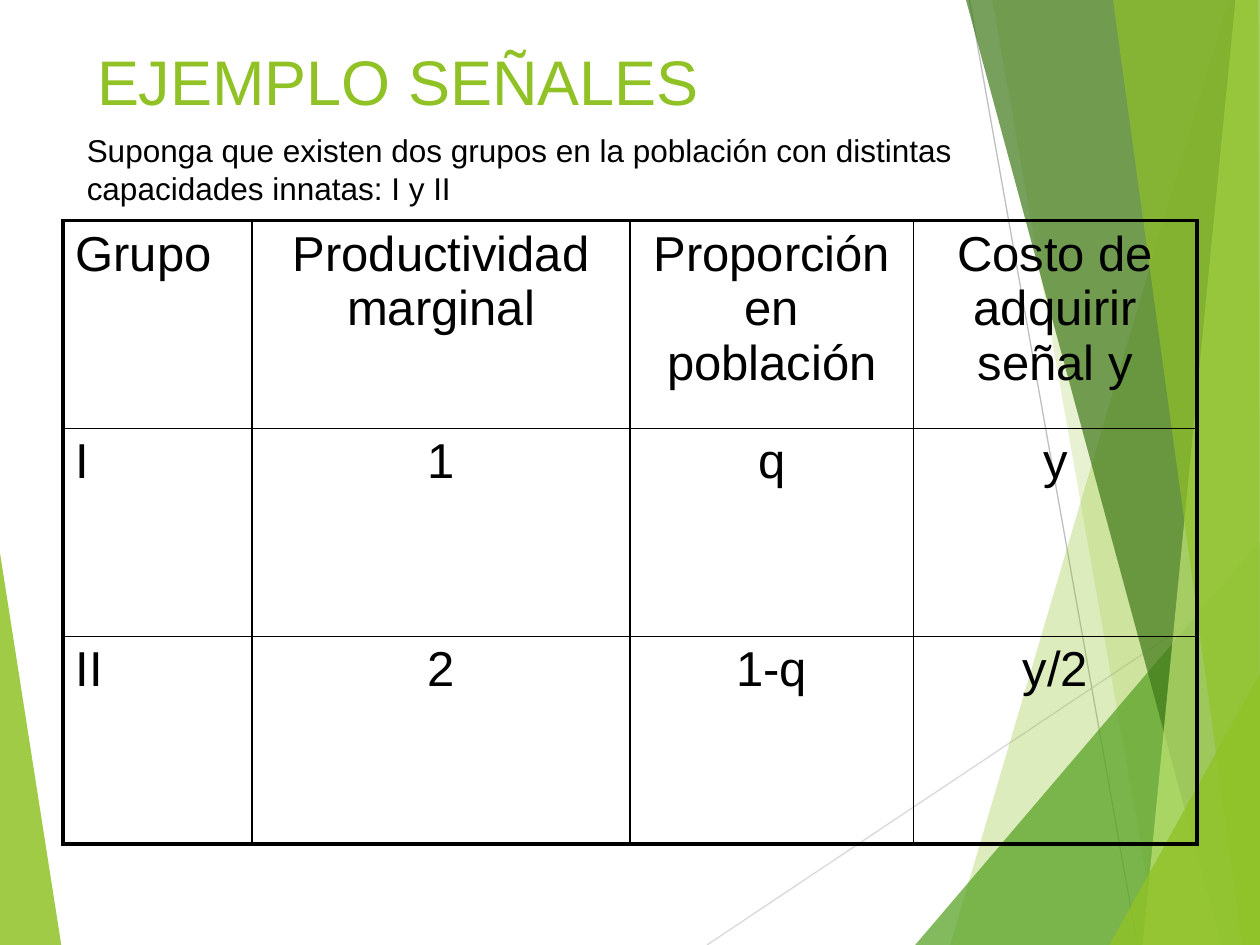
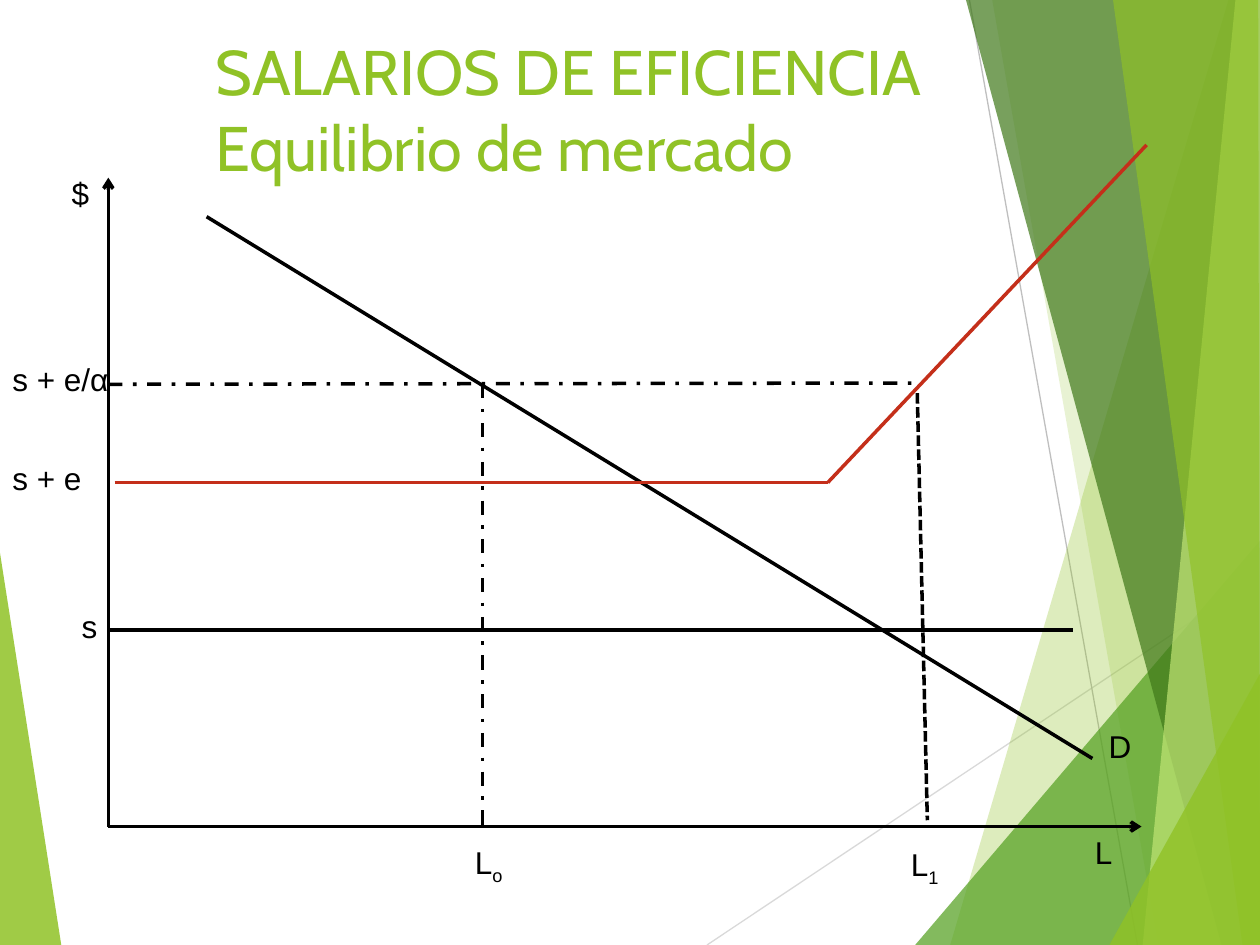
from dataclasses import dataclass
from itertools import product

from pptx import Presentation
from pptx.dml.color import RGBColor
from pptx.enum.dml import MSO_LINE
from pptx.enum.shapes import MSO_CONNECTOR
from pptx.enum.text import MSO_ANCHOR, MSO_AUTO_SIZE, PP_ALIGN as Align
from pptx.oxml import parse_xml
from pptx.oxml.ns import nsdecls, qn
from pptx.oxml.xmlchemy import OxmlElement
from pptx.slide import Slide
from pptx.util import Pt

W, H = 720, 540
GREEN, LEAF, FOREST, LIME = "90C226", "54A021", "3F7819", "C0E474"
BLACK, RED = "000000", "C42F1A"


@dataclass
class Line:
    start: tuple[float, float]
    end: tuple[float, float]
    color: str = BLACK
    width: float = 2
    dash: MSO_LINE | None = None
    arrow: bool = False


@dataclass
class Band:
    points: list[tuple[int, int]]
    color: str
    opacity: int


@dataclass
class Label:
    text: str
    left: float
    top: float
    width: float
    sub: str = ""


# Decoration shared by both slides, from back to front
DECORATION = [
    Band([(0, 316), (35, H), (0, H)], GREEN, 85),
    Line((404, H), (W, 329), "D9D9D9", 0.75),
    Line((554, 0), (650, H), "BFBFBF", 0.75),
    Band([(702, 0), (543, H), (W, H), (W, 0)], GREEN, 30),
    Band([(567, 0), (662, H), (W, H), (W, 0)], GREEN, 20),
    Band([(523, H), (W, 309), (W, H)], LEAF, 72),
    Band([(552, 0), (698, H), (W, H), (W, 0)], FOREST, 70),
    Band([(706, 0), (653, H), (W, H), (W, 0)], LIME, 70),
    Band([(636, 0), (710, H), (W, H), (719, 0)], GREEN, 65),
    Band([(634, H), (W, 385), (W, H)], GREEN, 80),
]

# Groups and their signalling costs
TABLE_ROWS = [
    ("Grupo", "Productividad marginal", "Proporción en población",
     "Costo de adquirir señal y"),
    ("I", "1", "q", "y"),
    ("II", "2", "1-q", "y/2"),
]
COL_WIDTHS = (108, 216, 162, 162)
ROW_HEIGHT = 118.8

# Market equilibrium diagram
AXIS_X, AXIS_Y = 61.92, 472.32
WAGE_S, WAGE_SE, WAGE_SEA = 360, 275.76, 219.6
L0_X, KINK_X = 275.76, 473.04
DIAGRAM_LINES = [
    Line((AXIS_X, AXIS_Y), (AXIS_X, 101.52), arrow=True),
    Line((AXIS_X, AXIS_Y), (652.32, AXIS_Y), arrow=True),
    Line((118.08, 123.84), (624.24, 433.44)),
    Line((AXIS_X, WAGE_S), (613.44, WAGE_S)),
    Line((65.52, WAGE_SE), (KINK_X, WAGE_SE), RED),
    Line((AXIS_X, WAGE_SEA), (524.16, 218.88), dash=MSO_LINE.DASH_DOT),
    Line((L0_X, WAGE_SEA), (L0_X, AXIS_Y), dash=MSO_LINE.DASH_DOT),
    Line((524.16, 224.64), (529.92, 468.72), dash=MSO_LINE.SQUARE_DOT),
    Line((KINK_X, WAGE_SE), (655.2, 82.8), RED),
]
DIAGRAM_LABELS = [
    Label("L", 618.48, 472.32, 84),
    Label("$", 33.84, 95.76, 56),
    Label("s", 39.6, 343.44, 56),
    Label("s + e", 0, 258.48, 56),
    Label("s + e/α", 0, 202.32, 84),
    Label("L", 264.24, 478.08, 90, sub="o"),
    Label("L", 513.36, 479.52, 40, sub="1"),
    Label("D", 626.4, 411.84, 40),
]


def rgb(color: str) -> RGBColor:
    return RGBColor.from_string(color)


def write(tf, text: str, *, size: float = 18, font: str = "Arial",
          color: str = BLACK, align: Align = Align.LEFT, sub: str = "") -> None:
    """Fill a text frame with one formatted paragraph."""
    tf.word_wrap = True
    p = tf.paragraphs[0]
    p.alignment = align
    p.space_before = Pt(0)
    for i, line in enumerate(text.split("\n")):
        if i:
            p.add_line_break()
        p.add_run().text = line
    if sub:
        r = p.add_run()
        r.text = sub
        r.font._element.set("baseline", "-25000")
    for r in p.runs:
        r.font.size, r.font.name = Pt(size), font
        r.font.color.rgb = rgb(color)


def draw_line(s: Slide, line: Line):
    c = s.shapes.add_connector(MSO_CONNECTOR.STRAIGHT,
                               *map(Pt, line.start + line.end))
    c.line.color.rgb = rgb(line.color)
    c.line.width = Pt(line.width)
    if line.dash:
        c.line.dash_style = line.dash
    if line.arrow:
        tail = OxmlElement("a:tailEnd")
        tail.set("type", "arrow")
        c.line._get_or_add_ln().append(tail)
    c._element.spPr.append(OxmlElement("a:effectLst"))
    return c


def draw_band(s: Slide, band: Band):
    builder = s.shapes.build_freeform(*band.points[0], scale=Pt(1))
    builder.add_line_segments(band.points[1:], close=True)
    sp = builder.convert_to_shape()
    sp.shadow.inherit = False
    sp.fill.solid()
    sp.fill.fore_color.rgb = rgb(band.color)
    sp.line.fill.background()
    alpha = OxmlElement("a:alpha")
    alpha.set("val", str(band.opacity * 1000))
    sp._element.spPr.find(".//" + qn("a:srgbClr")).append(alpha)
    return sp


def decorate_layout(s: Slide) -> None:
    """Draw the decoration and move it to the layout, behind all slide content."""
    tree = s.slide_layout.shapes._spTree
    for item in DECORATION:
        draw = draw_band if isinstance(item, Band) else draw_line
        tree.append(draw(s, item)._element)


def add_slide(prs, title: str, left: float, top: float, font: str) -> Slide:
    s = prs.slides.add_slide(prs.slide_layouts[5])
    sp = s.shapes.title
    sp.left, sp.top, sp.width, sp.height = map(Pt, (left, top, 500, 104))
    tf = sp.text_frame
    tf.auto_size = MSO_AUTO_SIZE.NONE
    tf.vertical_anchor = MSO_ANCHOR.TOP
    write(tf, title, size=36, font=font, color=GREEN)
    return s


def add_label(s: Slide, label: Label, height: float = 29) -> None:
    box = s.shapes.add_textbox(
        *map(Pt, (label.left, label.top, label.width, height)))
    write(box.text_frame, label.text, sub=label.sub)


def set_borders(cell, widths: dict[str, float]) -> None:
    tc_pr = cell._tc.get_or_add_tcPr()
    for i, (side, width) in enumerate(widths.items()):
        tc_pr.insert(i, parse_xml(
            f'<a:ln{side} {nsdecls("a")} w="{Pt(width)}"><a:solidFill>'
            f'<a:srgbClr val="{BLACK}"/></a:solidFill></a:ln{side}>'))


def add_group_table(s: Slide) -> None:
    n_rows, n_cols = len(TABLE_ROWS), len(COL_WIDTHS)
    table = s.shapes.add_table(
        n_rows, n_cols, Pt(36), Pt(126),
        Pt(sum(COL_WIDTHS)), Pt(ROW_HEIGHT * n_rows)).table
    table.first_row = table.horz_banding = False
    for col, width in zip(table.columns, COL_WIDTHS):
        col.width = Pt(width)
    for row in table.rows:
        row.height = Pt(ROW_HEIGHT)
    for i, j in product(range(n_rows), range(n_cols)):
        cell = table.cell(i, j)
        write(cell.text_frame, TABLE_ROWS[i][j], size=28,
              align=Align.CENTER if j else Align.LEFT)
        cell.fill.background()
        outer = {"L": j == 0, "R": j == n_cols - 1,
                 "T": i == 0, "B": i == n_rows - 1}
        set_borders(cell, {k: 2.25 if v else 1 for k, v in outer.items()})


def main() -> None:
    prs = Presentation()
    prs.slide_width, prs.slide_height = Pt(W), Pt(H)

    # Signalling example
    s = add_slide(prs, "EJEMPLO SEÑALES", 48.24, 20.88, "Arial")
    decorate_layout(s)
    add_group_table(s)
    add_label(s, Label("Suponga que existen dos grupos en la población con "
                       "distintas capacidades innatas: I y II",
                       42.48, 71.28, 533), height=51)

    # Efficiency wages
    s = add_slide(prs, "SALARIOS DE EFICIENCIA\nEquilibrio de mercado",
                  115.92, 15.12, "Cabin")
    for line in DIAGRAM_LINES:
        draw_line(s, line)
    for label in DIAGRAM_LABELS:
        add_label(s, label)

    prs.save("out.pptx")


if __name__ == "__main__":
    main()
